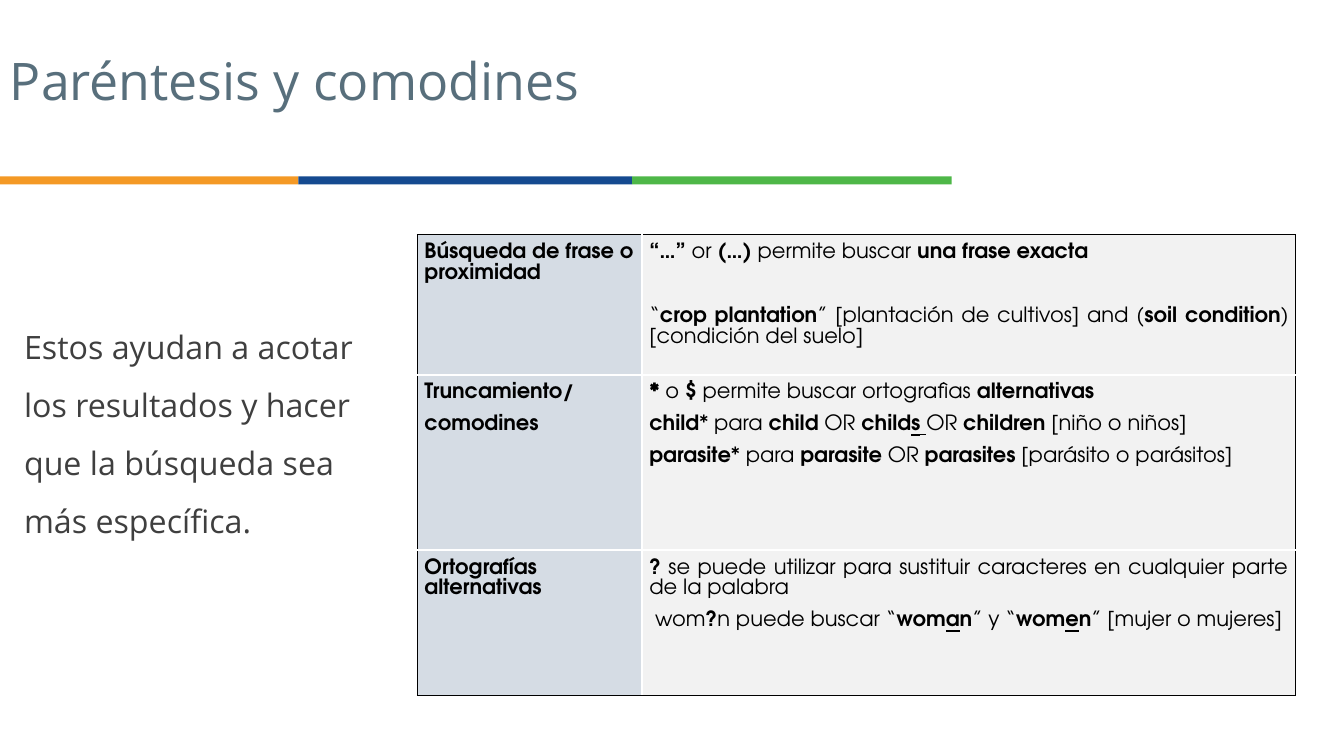
from lxml import etree
from pptx import Presentation
from pptx.dml.color import RGBColor as RGB
from pptx.enum.shapes import MSO_SHAPE as SHAPE
from pptx.enum.text import MSO_ANCHOR as ANCHOR, PP_ALIGN as ALIGN
from pptx.oxml.ns import qn
from pptx.util import Inches, Pt

COLORS = {
    "orange": "F49925", "blue": "154A90", "green": "4EB748",
    "title": "586F7C", "body": "3F3F3F", "black": "000000",
    "white": "FFFFFF", "label": "D5DCE4", "detail": "F2F2F2",
}
ROWS = [
    (["|Búsqueda de frase o proximidad"],
     ["|“…”| or| (…) |permite buscar |una frase exacta",
      "“|crop plantation|” [plantación de cultivos] and (|soil condition|) [condición del suelo]"]),
    (["|Truncamiento/", "|comodines"],
     ["|*| o |$ |permite buscar ortografìas |alternativas",
      "|child|* para |child| OR |child_s| _OR |children| [niño o niños]",
      "|parasite|* para |parasite| OR |parasites| [parásito o parásitos]"]),
    (["|Ortografías alternativas"],
     ["|?| se puede utilizar para sustituir caracteres en cualquier parte de la palabra",
      " wom|?|n puede buscar “|wom_a_n|” y “|wom_e_n|” [mujer o mujeres]"]),
]
COL_WIDTHS = [2.23, 6.48]
ROW_HEIGHTS = [1.39, 1.74, 1.44]
EXAMPLE_GAP = 31


def write(p, text, size, font, color, spacing=1, before=0, align=ALIGN.LEFT):
    """Write text into p; | toggles bold and _ toggles underline."""
    p.alignment = align
    p.line_spacing = spacing
    p.space_before = Pt(before)
    for i, bold_part in enumerate(text.split("|")):
        bold = i % 2 == 1
        for j, part in enumerate(bold_part.split("_")):
            if j:
                write.underline = not write.underline
            if part:
                r = p.add_run()
                r.text = part
                r.font.size = Pt(size)
                r.font.name = font
                r.font.bold = bold
                r.font.underline = write.underline
                r.font.color.rgb = RGB.from_string(COLORS[color])


write.underline = False


class SlideBuilder:
    title_font = "Open Sans"
    table_font = "TeX Gyre Adventor"

    def __init__(self, prs):
        self.s = prs.slides.add_slide(prs.slide_layouts[6])

    def bar(self, x, y, w, h, color):
        sp = self.s.shapes.add_shape(SHAPE.RECTANGLE, Inches(x), Inches(y), Inches(w), Inches(h))
        sp.shadow.inherit = False
        sp.fill.solid()
        sp.fill.fore_color.rgb = RGB.from_string(COLORS[color])
        sp.line.fill.background()

    def text(self, x, y, w, h, text, anchor=ANCHOR.TOP, indent=0, **fmt):
        tf = self.s.shapes.add_textbox(Inches(x), Inches(y), Inches(w), Inches(h)).text_frame
        tf.word_wrap = True
        tf.vertical_anchor = anchor
        p = tf.paragraphs[0]
        if indent:
            p._p.get_or_add_pPr().set("marL", str(Inches(indent)))
        write(p, text, font=self.title_font, **fmt)

    def border(self, cell, side, outer):
        color, width = ("black", 1) if outer else ("white", 1.5)
        ln = etree.SubElement(cell._tc.get_or_add_tcPr(), qn("a:ln" + side), w=str(Pt(width)))
        fill = etree.SubElement(ln, qn("a:solidFill"))
        etree.SubElement(fill, qn("a:srgbClr"), val=COLORS[color])

    def cell(self, cell, paragraphs, outer, color, gap, align):
        cell.margin_left = cell.margin_right = Inches(0.07)
        cell.margin_top = cell.margin_bottom = Inches(0.07)
        for side, is_outer in outer.items():
            self.border(cell, side, is_outer)
        cell.fill.solid()
        cell.fill.fore_color.rgb = RGB.from_string(COLORS[color])
        tf = cell.text_frame
        for i, text in enumerate(paragraphs):
            p = tf.add_paragraph() if i else tf.paragraphs[0]
            write(p, text, 15, self.table_font, "black", spacing=1.07,
                  before=gap if i else 0, align=align)

    def table(self, x, y, rows):
        last_row, last_col = len(rows) - 1, len(COL_WIDTHS) - 1
        table = self.s.shapes.add_table(
            len(rows), len(COL_WIDTHS), Inches(x), Inches(y),
            Inches(sum(COL_WIDTHS)), Inches(sum(ROW_HEIGHTS))).table
        table.first_row = table.horz_banding = False
        for col, width in zip(table.columns, COL_WIDTHS):
            col.width = Inches(width)
        for r, (row, height) in enumerate(zip(rows, ROW_HEIGHTS)):
            table.rows[r].height = Inches(height)
            for c, paragraphs in enumerate(row):
                outer = {"L": c == 0, "R": c == last_col, "T": r == 0, "B": r == last_row}
                self.cell(table.cell(r, c), paragraphs, outer,
                          "detail" if c else "label",
                          EXAMPLE_GAP if r == 0 else 8,
                          ALIGN.JUSTIFY if c else ALIGN.LEFT)


def main():
    prs = Presentation()
    prs.slide_width, prs.slide_height = Inches(13.33), Inches(7.5)
    b = SlideBuilder(prs)
    x = 0
    for width, color in [(2.96, "orange"), (3.31, "blue"), (3.17, "green")]:
        b.bar(x, 1.75, width, 0.08, color)
        x += width
    b.text(0, 0.5, 8.91, 1.18, "Paréntesis y comodines",
           size=37, color="title", spacing=0.9)
    b.text(0, 1.99, 4, 4.43,
           "Estos ayudan a acotar los resultados y hacer que la búsqueda sea más específica.",
           anchor=ANCHOR.MIDDLE, indent=0.14, size=23, color="body", spacing=1.5)
    b.table(4.14, 2.33, ROWS)
    prs.save("out.pptx")


if __name__ == "__main__":
    main()
